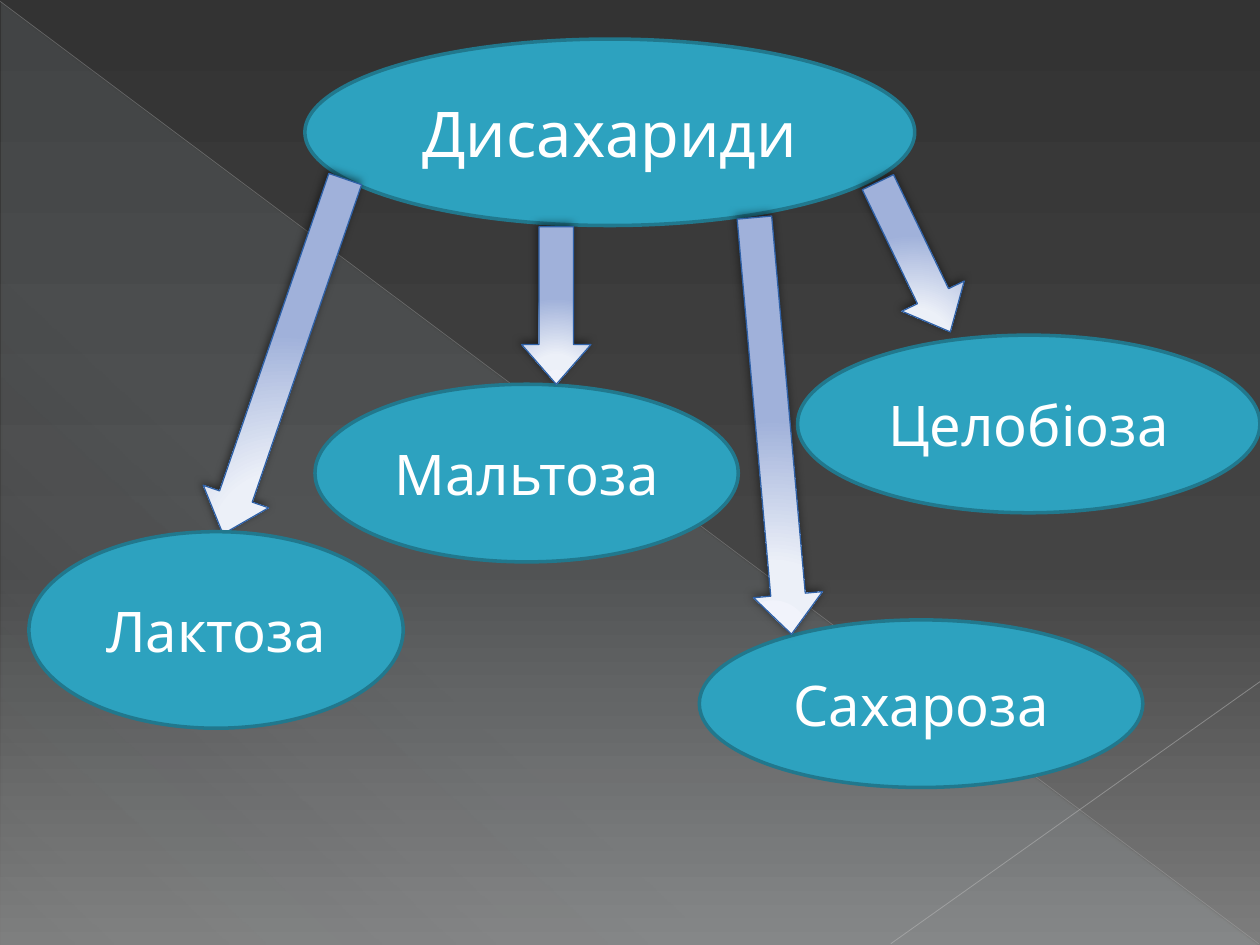
from dataclasses import dataclass

from lxml.etree import SubElement
from pptx import Presentation
from pptx.dml.color import RGBColor
from pptx.enum.shapes import MSO_CONNECTOR, MSO_SHAPE
from pptx.enum.text import MSO_ANCHOR, PP_ALIGN
from pptx.oxml.ns import qn
from pptx.util import Inches, Pt


@dataclass(frozen=True)
class Theme:
    font: str = "League Spartan"
    topic_size: int = 36
    sugar_size: int = 32
    text: str = "FFFFFF"
    oval: str = "2DA2BF"
    oval_line: str = "21788D"
    arrow_line: str = "2F61A7"
    shadow: str = "000000"
    backdrop: tuple = ((0, "333333", 100), (60, "444444", 100), (100, "7D7D7D", 100))
    facet: tuple = ((0, "DEF5FA", 10), (70, "DEF5FA", 8), (100, "DEF5FA", 1))
    arrow: tuple = ((0, "F1F3FB", 100), (34, "ECF0F8", 100), (100, "A0B1DA", 100))


THEME = Theme()


def add_alpha(color, percent):
    SubElement(color, qn("a:alpha"), val=str(percent * 1000))


def apply_gradient(properties, stops, angle=None):
    solid = properties.find(qn("a:solidFill"))
    gradient = SubElement(properties, qn("a:gradFill"), rotWithShape="1")
    properties.replace(solid, gradient)
    stop_list = SubElement(gradient, qn("a:gsLst"))
    for position, rgb, opacity in stops:
        stop = SubElement(stop_list, qn("a:gs"), pos=str(position * 1000))
        color = SubElement(stop, qn("a:srgbClr"), val=rgb)
        if opacity < 100:
            add_alpha(color, opacity)
    if angle is not None:
        SubElement(gradient, qn("a:lin"), ang=str(angle * 60000), scaled="0")
    else:
        radial = SubElement(gradient, qn("a:path"), {"path": "circle"})
        SubElement(radial, qn("a:fillToRect"), l="50000", t="155000", r="50000", b="-55000")


def set_line(line, rgb, width):
    line.color.rgb = RGBColor.from_string(rgb)
    line.width = Pt(width)


def add_preset(slide, preset, box):
    shape = slide.shapes.add_shape(preset, *map(Inches, box))
    shape.shadow.inherit = False
    shape.fill.solid()
    return shape


def add_hairline(slide, start, end, rgb, width, opacity):
    hairline = slide.shapes.add_connector(MSO_CONNECTOR.STRAIGHT, *map(Inches, start + end))
    set_line(hairline.line, rgb, width)
    properties = hairline.element.spPr
    add_alpha(properties.find(".//" + qn("a:srgbClr")), opacity)
    SubElement(properties, qn("a:effectLst"))


def add_backdrop(slide):
    slide.background.fill.solid()
    apply_gradient(slide.element.find(".//" + qn("p:bgPr")), THEME.backdrop, 90)
    facet = add_preset(slide, MSO_SHAPE.RIGHT_TRIANGLE, (0.01, 0.02, 9.98, 7.48))
    facet.line.fill.background()
    apply_gradient(facet.element.spPr, THEME.facet, 133)
    add_hairline(slide, (0, 0.01), (9.99, 7.49), "B9B9B9", 0.39, 35)
    add_hairline(slide, (10, 5.41), (7.07, 7.49), "C1C1C1", 0.47, 45)


def add_oval(slide, label, box, size=THEME.sugar_size):
    oval = add_preset(slide, MSO_SHAPE.OVAL, box)
    oval.fill.fore_color.rgb = RGBColor.from_string(THEME.oval)
    set_line(oval.line, THEME.oval_line, 2)
    frame = oval.text_frame
    frame.text = label
    frame.word_wrap = True
    frame.vertical_anchor = MSO_ANCHOR.MIDDLE
    paragraph = frame.paragraphs[0]
    paragraph.alignment = PP_ALIGN.CENTER
    font = paragraph.runs[0].font
    font.name = THEME.font
    font.size = Pt(size)
    font.color.rgb = RGBColor.from_string(THEME.text)


def add_arrow(slide, left, top, length, rotation=0):
    arrow = add_preset(slide, MSO_SHAPE.DOWN_ARROW, (left, top, 0.55, length))
    arrow.adjustments[0] = 0.5
    arrow.adjustments[1] = 0.573
    arrow.rotation = rotation
    set_line(arrow.line, THEME.arrow_line, 0.75)
    properties = arrow.element.spPr
    apply_gradient(properties, THEME.arrow)
    shadow = SubElement(
        properties.find(qn("a:effectLst")), qn("a:outerShdw"),
        blurRad=str(Pt(5)), dist=str(Pt(2)), dir=str(245 * 60000), rotWithShape="0",
    )
    add_alpha(SubElement(shadow, qn("a:srgbClr"), val=THEME.shadow), 50)


def main():
    presentation = Presentation()
    presentation.slide_width = Inches(10)
    presentation.slide_height = Inches(7.5)
    slide = presentation.slides.add_slide(presentation.slide_layouts.get_by_name("Blank"))

    add_backdrop(slide)
    add_oval(slide, "Дисахариди", (2.42, 0.31, 4.84, 1.48), THEME.topic_size)
    add_arrow(slide, 1.98, 1.34, 2.98, 19)
    sugars = (
        ("Лактоза", (0.23, 4.22, 2.97, 1.56)),
        ("Сахароза", (5.55, 4.92, 3.52, 1.33)),
        ("Целобіоза", (6.33, 2.66, 3.67, 1.41)),
        ("Мальтоза", (2.5, 3.05, 3.36, 1.41)),
    )
    for sugar, box in sugars:
        add_oval(slide, sugar, box)
    add_arrow(slide, 4.14, 1.8, 1.25)
    add_arrow(slide, 6.98, 1.38, 1.32, 334.2)
    add_arrow(slide, 5.86, 1.72, 3.32, 354.9)

    presentation.save("out.pptx")


if __name__ == "__main__":
    main()
